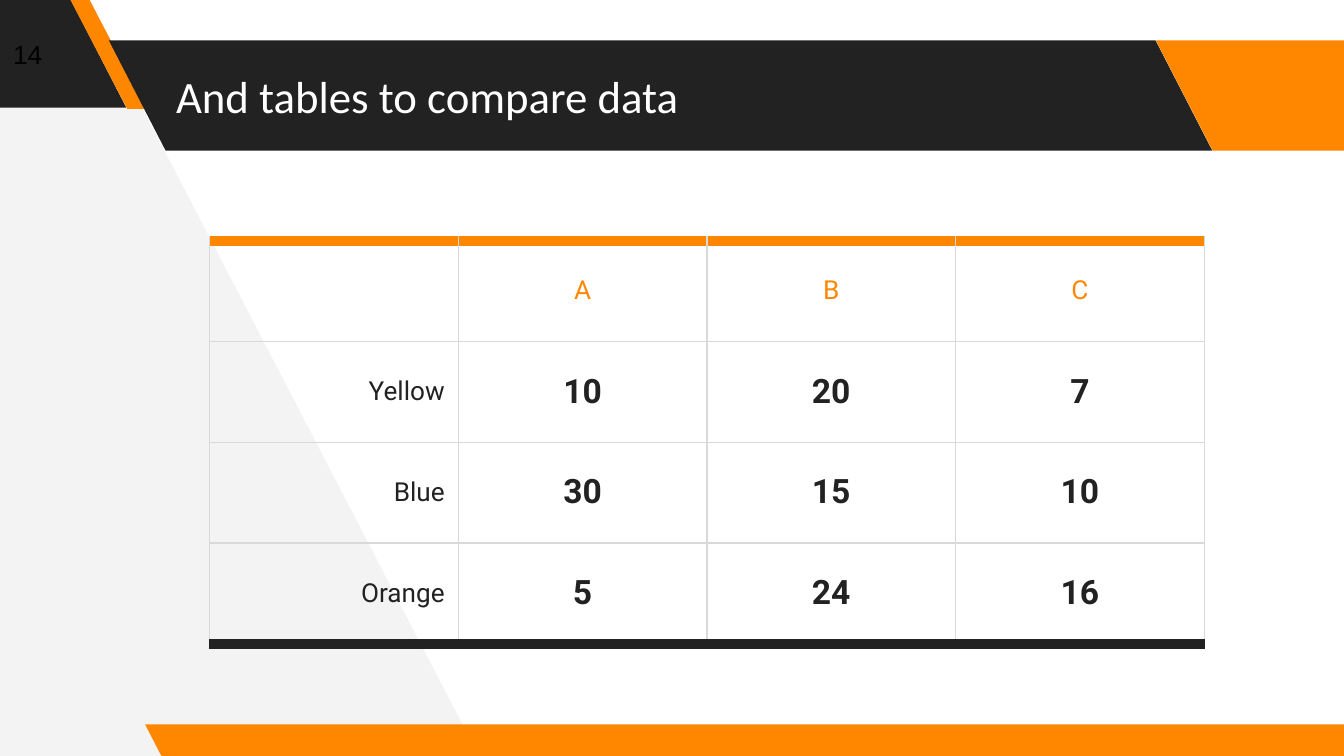
from dataclasses import dataclass

from lxml.etree import SubElement
from pptx import Presentation
from pptx.dml.color import RGBColor
from pptx.enum.shapes import MSO_SHAPE as Preset
from pptx.enum.text import MSO_ANCHOR as Anchor, PP_ALIGN as Align
from pptx.oxml.ns import qn
from pptx.util import Inches, Pt


@dataclass(frozen=True)
class Theme:
    dark: str = "222222"
    accent: str = "FF8700"
    pale: str = "F3F3F3"
    grid: str = "D9D9D9"
    white: str = "FFFFFF"
    black: str = "000000"
    title_font: str = "Calibri"
    body_font: str = "Roboto"
    number_font: str = "Arial"
    title_size: int = 24
    label_size: int = 14
    value_size: int = 18
    thin: float = 0.75
    thick: float = 6


THEME = Theme()

BANDS = [
    ((-0.99, -0.02, 1.93, 0.82), 0.515, THEME.dark),
    ((0.52, -0.01, 0.57, 0.82), 0.75, THEME.accent),
    ((0.81, 0.3, 8.21, 0.82), 0.515, THEME.dark),
    ((8.6, 0.3, 1.92, 0.82), 0.515, THEME.accent),
    ((1.08, 5.39, 9.15, 0.25), 0.515, THEME.accent),
]

ROWS = [
    ("", "A", "B", "C"),
    ("Yellow", "10", "20", "7"),
    ("Blue", "30", "15", "10"),
    ("Orange", "5", "24", "16"),
]


def paint(shape, color):
    shape.fill.solid()
    shape.fill.fore_color.rgb = RGBColor.from_string(color)
    shape.line.fill.background()
    shape.shadow.inherit = False


def add_backdrop(page):
    corners = [(3.56, 5.62), (0.62, -0.04), (-0.06, -0.04), (-0.02, 5.66)]
    start, *rest = [(Inches(x), Inches(y)) for x, y in corners]
    builder = page.shapes.build_freeform(*start)
    builder.add_line_segments(rest, close=True)
    paint(builder.convert_to_shape(), THEME.pale)


def add_band(page, bounds, slant, color):
    band = page.shapes.add_shape(Preset.PARALLELOGRAM, *map(Inches, bounds))
    band.adjustments[0] = slant
    band._element.spPr.xfrm.set("flipH", "1")
    paint(band, color)


def write(frame, text, font, size, color, align=Align.LEFT, bold=False):
    frame.text = text
    para = frame.paragraphs[0]
    para.alignment = align
    for span in para.runs:
        span.font.name = font
        span.font.size = Pt(size)
        span.font.bold = bold
        span.font.color.rgb = RGBColor.from_string(color)


def place_title(page, text):
    title = page.shapes.title
    title.left, title.top, title.width, title.height = map(Inches, (1.21, 0.3, 7.35, 0.82))
    frame = title.text_frame
    frame.margin_left = frame.margin_right = Inches(0.1)
    frame.margin_top = frame.margin_bottom = Inches(0.1)
    frame.vertical_anchor = Anchor.MIDDLE
    write(frame, text, THEME.title_font, THEME.title_size, THEME.white)
    page.shapes._spTree.append(title._element)


def add_page_number(page, text):
    box = page.shapes.add_textbox(0, 0, Inches(0.6), Inches(0.81))
    box.text_frame.word_wrap = True
    box.text_frame.vertical_anchor = Anchor.MIDDLE
    write(box.text_frame, text, THEME.number_font, THEME.label_size, THEME.black)


def set_border(cell, side, color, width):
    line = SubElement(cell._tc.get_or_add_tcPr(), qn(f"a:ln{side}"), w=str(Pt(width)))
    fill = SubElement(line, qn("a:solidFill"))
    SubElement(fill, qn("a:srgbClr"), val=color)


def style_cell(cell, text, row, column):
    edges = dict.fromkeys("LRTB", (THEME.grid, THEME.thin))
    if row == 0:
        edges["T"] = (THEME.accent, THEME.thick)
    if row == len(ROWS) - 1:
        edges["B"] = (THEME.dark, THEME.thick)
    for side, (color, width) in edges.items():
        set_border(cell, side, color, width)
    cell.fill.background()
    cell.vertical_anchor = Anchor.MIDDLE
    cell.margin_left = cell.margin_right = Inches(0.1)
    cell.margin_top = cell.margin_bottom = Inches(0.07)
    is_value = row > 0 and column > 0
    write(
        cell.text_frame,
        text,
        THEME.body_font,
        THEME.value_size if is_value else THEME.label_size,
        THEME.dark if row else THEME.accent,
        Align.CENTER if column else Align.RIGHT,
        is_value,
    )


def add_comparison(page):
    count = len(ROWS[0])
    table = page.shapes.add_table(
        len(ROWS), count, Inches(1.56), Inches(1.79),
        Inches(1.85 * count), Inches(0.75 * len(ROWS)),
    ).table
    table.first_row = table.horz_banding = False
    for row, texts in enumerate(ROWS):
        for column, text in enumerate(texts):
            style_cell(table.cell(row, column), text, row, column)


def main():
    """Build the table comparison slide and save it."""
    deck = Presentation()
    deck.slide_width = Inches(10)
    deck.slide_height = Inches(10 * 9 / 16)
    page = deck.slides.add_slide(deck.slide_layouts[5])
    add_backdrop(page)
    for bounds, slant, color in BANDS:
        add_band(page, bounds, slant, color)
    place_title(page, "And tables to compare data")
    add_page_number(page, "14")
    add_comparison(page)
    deck.save("out.pptx")


if __name__ == "__main__":
    main()
